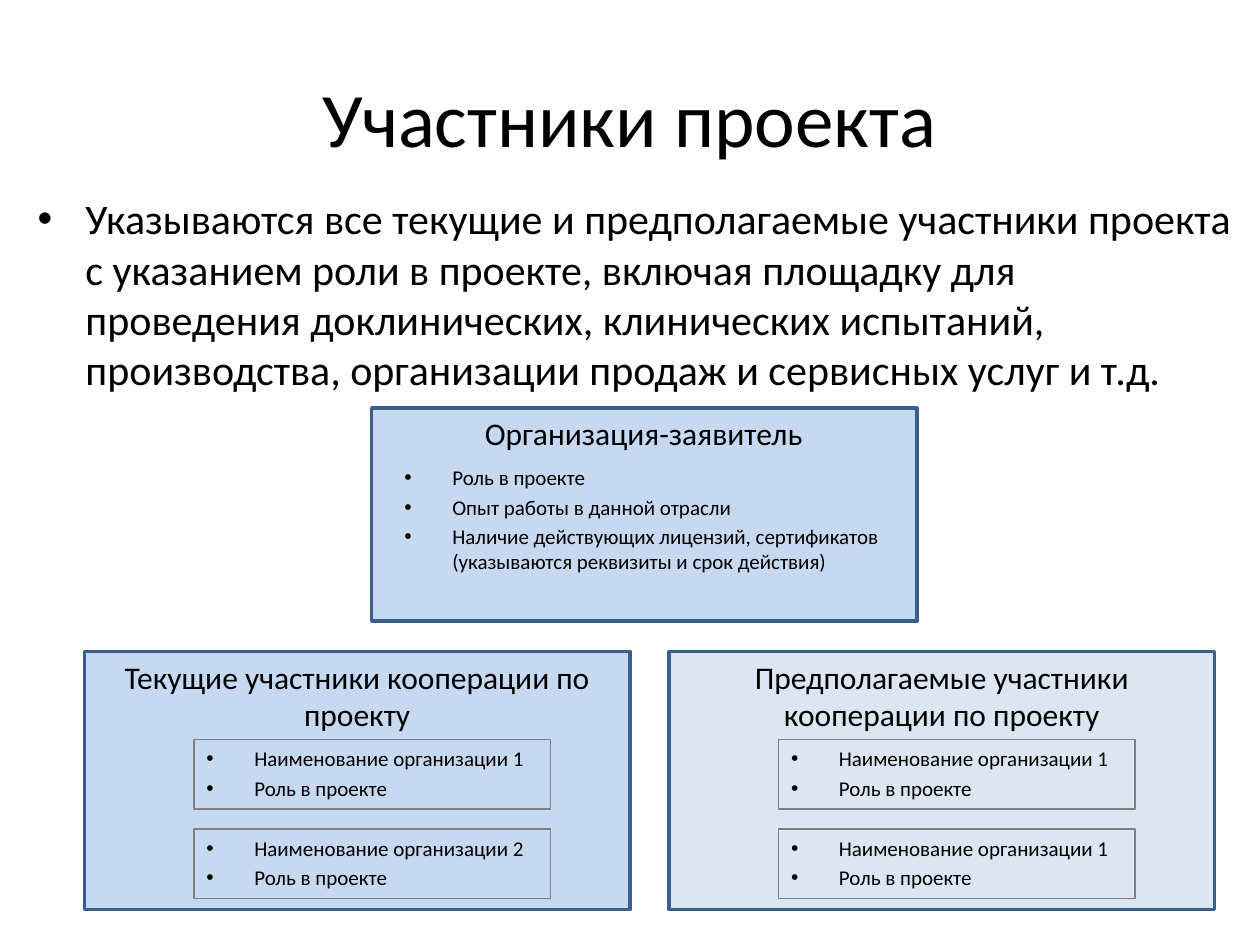
from lxml import etree
from pptx import Presentation
from pptx.dml.color import RGBColor
from pptx.enum import shapes, text
from pptx.oxml import ns
from pptx.util import Inches, Pt

COLORS = {
    "text": "000000",
    "current": "C6D9F1",
    "planned": "DCE6F2",
    "border": "3A5F8C",
    "thin_border": "808080",
}


def write(shape, *lines, size, align=text.PP_ALIGN.LEFT, bullet=False,
          anchor=text.MSO_ANCHOR.TOP, wrap=True):
    frame = shape.text_frame
    frame.word_wrap = wrap
    frame.auto_size = text.MSO_AUTO_SIZE.NONE
    frame.vertical_anchor = anchor
    frame.text = "\n".join(lines)
    for paragraph in frame.paragraphs:
        paragraph.alignment = align
        font = paragraph.runs[0].font
        font.name, font.size = "Calibri", Pt(size)
        font.color.rgb = RGBColor.from_string(COLORS["text"])
        if bullet:
            properties = paragraph._p.get_or_add_pPr()
            properties.set("marL", str(Inches(0.38)))
            properties.set("indent", str(-Inches(0.38)))
            spacing = etree.SubElement(properties, ns.qn("a:spcBef"))
            etree.SubElement(spacing, ns.qn("a:spcPct"), val="20000")
            etree.SubElement(properties, ns.qn("a:buFont"), typeface="Arial")
            etree.SubElement(properties, ns.qn("a:buChar"), char="•")


def add_box(left, top, width, height, border, line_width, fill=None):
    shape = slide.shapes.add_shape(
        shapes.MSO_SHAPE.RECTANGLE,
        Inches(left), Inches(top), Inches(width), Inches(height))
    shape.shadow.inherit = False
    if fill:
        shape.fill.solid()
        shape.fill.fore_color.rgb = RGBColor.from_string(COLORS[fill])
    else:
        shape.fill.background()
    shape.line.color.rgb = RGBColor.from_string(COLORS[border])
    shape.line.width = Pt(line_width)
    return shape


presentation = Presentation()
presentation.slide_width, presentation.slide_height = Inches(10), Inches(7.5)
slide = presentation.slides.add_slide(presentation.slide_layouts[1])

# Title
title = slide.shapes.title
title.left, title.top = Inches(0.5), Inches(0.3)
title.width, title.height = Inches(9), Inches(1.25)
write(title, "Участники проекта", size=44, align=text.PP_ALIGN.CENTER,
      anchor=text.MSO_ANCHOR.MIDDLE)

# Applicant organisation: the list stands in front of its box
applicant = add_box(2.95, 3.24, 4.33, 1.69, "border", 2, "current")
heading = slide.shapes.add_textbox(
    Inches(3.75), Inches(3.24), Inches(2.73), Inches(0.4))
write(heading, "Организация-заявитель", size=18, wrap=False)
body = slide.placeholders[1]
body.left, body.top = Inches(3.11), Inches(3.64)
body.width, body.height = Inches(4.17), Inches(1.17)
write(body, "Роль в проекте", "Опыт работы в данной отрасли",
      "Наличие действующих лицензий, сертификатов "
      "(указываются реквизиты и срок действия)", size=12, bullet=True)
heading.element.addnext(body.element)

# Current and planned participants, two organisations each
groups = [
    (0.67, "current", "Текущие участники кооперации по проекту", (1, 2)),
    (5.31, "planned", "Предполагаемые участники кооперации по проекту", (1, 1)),
]
for left, fill, caption, numbers in groups:
    add_box(left, 5.17, 4.33, 2.05, "border", 2, fill)
    heading = slide.shapes.add_textbox(
        Inches(left), Inches(5.17), Inches(4.33), Inches(0.71))
    write(heading, caption, size=18, align=text.PP_ALIGN.CENTER)
    for row, number in enumerate(numbers):
        organisation = add_box(left + 0.87, 5.87 + row * 0.71, 2.83, 0.55,
                               "thin_border", 0.75)
        write(organisation, f"Наименование организации {number}",
              "Роль в проекте", size=12, bullet=True)

# Introduction
introduction = slide.shapes.add_textbox(
    Inches(0.2), Inches(1.48), Inches(9.69), Inches(4.95))
write(introduction,
      "Указываются все текущие и предполагаемые участники проекта "
      "с указанием роли в проекте, включая площадку для проведения "
      "доклинических, клинических испытаний, производства, организации "
      "продаж и сервисных услуг и т.д.", size=24, bullet=True)

presentation.save("out.pptx")
